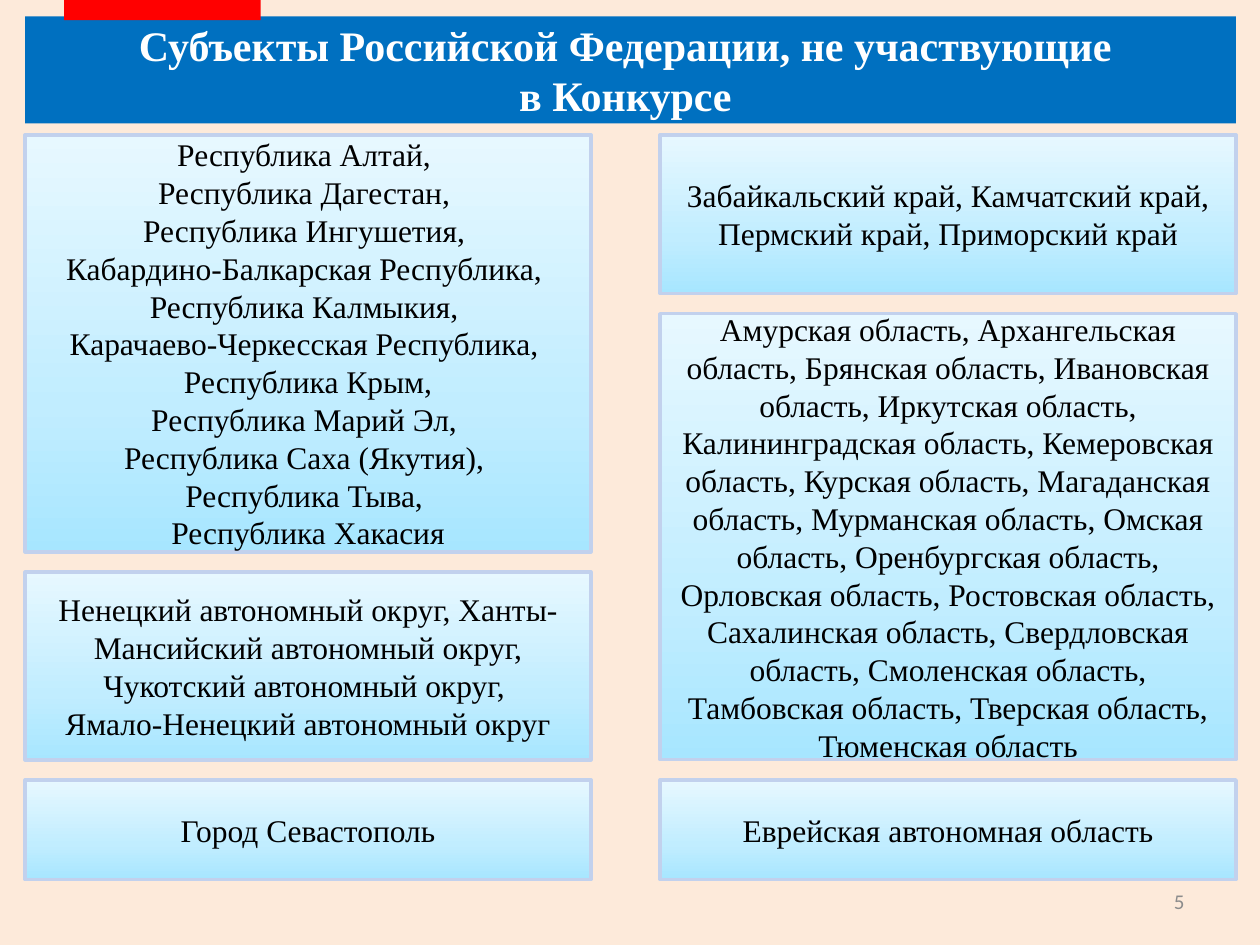
from copy import deepcopy

from pptx import Presentation
from pptx.dml.color import RGBColor
from pptx.enum.shapes import MSO_SHAPE
from pptx.enum.text import MSO_ANCHOR, MSO_AUTO_SIZE, PP_ALIGN
from pptx.oxml.ns import qn
from pptx.util import Inches, Pt

PEACH = RGBColor(0xFD, 0xEA, 0xDA)
BLUE = RGBColor(0x00, 0x70, 0xC0)
RED = RGBColor(0xFF, 0x00, 0x00)
WHITE = RGBColor(0xFF, 0xFF, 0xFF)
BLACK = RGBColor(0x00, 0x00, 0x00)
GREY = RGBColor(0x8C, 0x8C, 0x8C)
BORDER = RGBColor(0xC2, 0xD1, 0xED)
GRADIENT = [
    (0, RGBColor(0xA7, 0xE6, 0xFF)),
    (0.35, RGBColor(0xC1, 0xED, 0xFF)),
    (1, RGBColor(0xE7, 0xF8, 0xFF)),
]

COLS, ROWS = 100, 75
TOP, GAP = 10.7, 1.6

REPUBLICS = """Республика Алтай, 
Республика Дагестан, 
Республика Ингушетия, 
Кабардино-Балкарская Республика, 
Республика Калмыкия, 
Карачаево-Черкесская Республика, 
Республика Крым,\vРеспублика Марий Эл, 
Республика Саха (Якутия), 
Республика Тыва, 
Республика Хакасия"""
DISTRICTS = (
    "Ненецкий автономный округ, Ханты-Мансийский автономный округ, "
    "Чукотский автономный округ, \vЯмало-Ненецкий автономный округ"
)
TERRITORIES = "Забайкальский край, Камчатский край, Пермский край, Приморский край"
REGIONS = ", ".join(
    f"{name} область"
    for name in (
        "Амурская", "Архангельская", "Брянская", "Ивановская", "Иркутская",
        "Калининградская", "Кемеровская", "Курская", "Магаданская",
        "Мурманская", "Омская", "Оренбургская", "Орловская", "Ростовская",
        "Сахалинская", "Свердловская", "Смоленская", "Тамбовская",
        "Тверская", "Тюменская",
    )
)

COLUMNS = [
    (2, 44.9, [(33.1, REPUBLICS), (14.9, DISTRICTS), (7.9, "Город Севастополь")]),
    (52.4, 45.7, [(12.6, TERRITORIES), (35.4, REGIONS),
                  (7.9, "Еврейская автономная область")]),
]


class Deck:
    title_font = dict(name="Times New Roman", size=Pt(24), bold=True)
    body_font = dict(name="Times New Roman", size=Pt(18))
    number_font = dict(name="Calibri", size=Pt(12))

    def __init__(self, prs):
        self.prs = prs
        self.s = prs.slides.add_slide(prs.slide_layouts[5])
        self.s.background.fill.solid()
        self.s.background.fill.fore_color.rgb = PEACH

    def place(self, x, y, w, h):
        col, row = self.prs.slide_width / COLS, self.prs.slide_height / ROWS
        return int(x * col), int(y * row), int(w * col), int(h * row)

    def set_text(self, sp, text, font, color, align=PP_ALIGN.CENTER):
        tf = sp.text_frame
        tf.text = text
        frame = dict(word_wrap=True, auto_size=MSO_AUTO_SIZE.NONE,
                     vertical_anchor=MSO_ANCHOR.MIDDLE)
        for key, value in frame.items():
            setattr(tf, key, value)
        for p in tf.paragraphs:
            p.alignment = align
            for r in p.runs:
                for key, value in font.items():
                    setattr(r.font, key, value)
                r.font.color.rgb = color

    def title(self, text, *cell):
        sp = self.s.shapes.title
        sp.left, sp.top, sp.width, sp.height = self.place(*cell)
        sp.fill.solid()
        sp.fill.fore_color.rgb = BLUE
        self.set_text(sp, text, self.title_font, WHITE)

    def rect(self, *cell):
        sp = self.s.shapes.add_shape(MSO_SHAPE.RECTANGLE, *self.place(*cell))
        sp.shadow.inherit = False
        return sp

    def tab(self, *cell):
        sp = self.rect(*cell)
        sp.fill.solid()
        sp.fill.fore_color.rgb = RED
        sp.line.fill.background()

    def card(self, text, *cell):
        sp = self.rect(*cell)
        sp.fill.gradient()
        sp.fill.gradient_angle = 90
        stops = sp.element.spPr.find(".//" + qn("a:gsLst"))
        stops.append(deepcopy(stops[-1]))
        for stop, (position, color) in zip(sp.fill.gradient_stops, GRADIENT):
            stop.position = position
            stop.color.rgb = color
        sp.line.color.rgb = BORDER
        sp.line.width = Pt(2)
        self.set_text(sp, text, self.body_font, BLACK)

    def stack(self, x, w, cards):
        y = TOP
        for h, text in cards:
            self.card(text, x, y, w, h)
            y += h + GAP

    def number(self, text, *cell):
        sp = self.s.shapes.add_textbox(*self.place(*cell))
        self.set_text(sp, text, self.number_font, GREY, PP_ALIGN.RIGHT)


def main():
    prs = Presentation()
    prs.slide_width, prs.slide_height = Inches(10), Inches(7.5)
    deck = Deck(prs)
    deck.title("Субъекты Российской Федерации, не участвующие \vв Конкурсе ",
               2, 1.3, 96.1, 8.5)
    deck.number("5", 71.7, 69.5, 23.3, 4)
    deck.tab(5.1, 0, 15.6, 1.6)
    for x, w, cards in COLUMNS:
        deck.stack(x, w, cards)
    prs.save("out.pptx")


if __name__ == "__main__":
    main()
